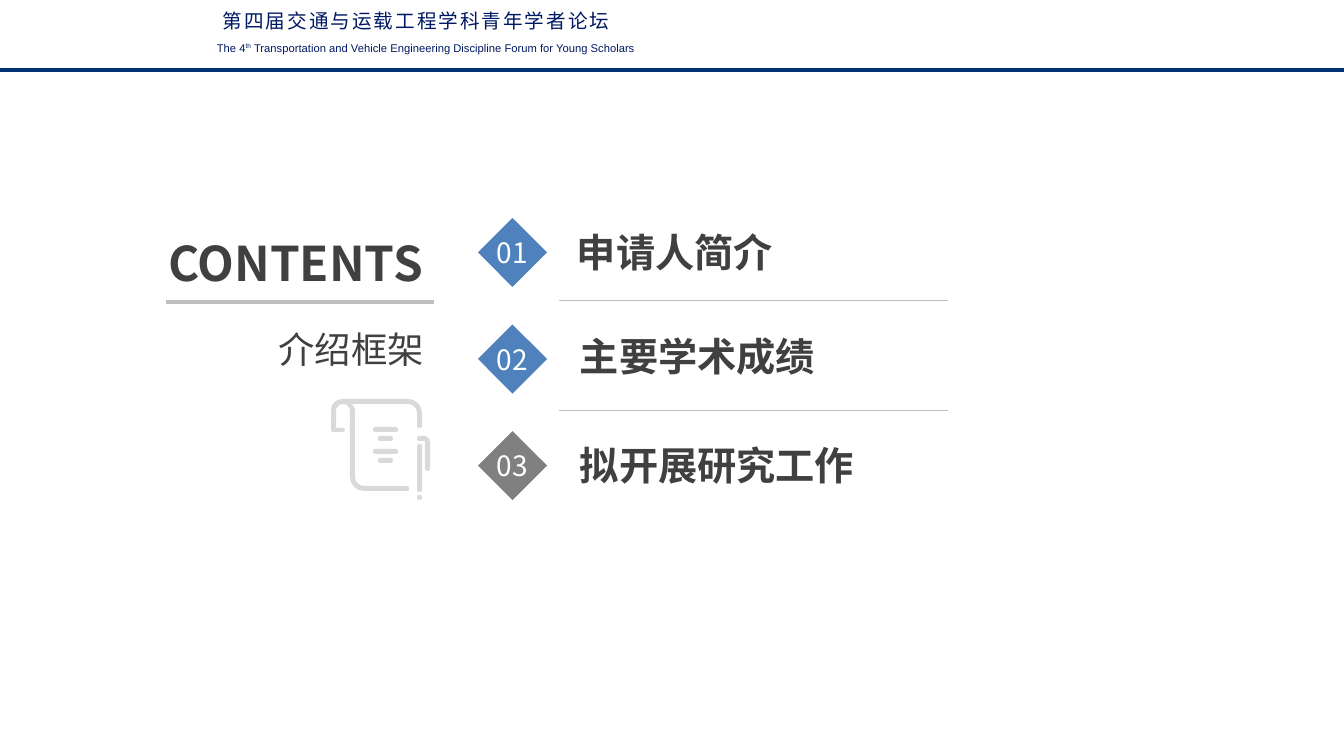
import math

from lxml import etree
from pptx import Presentation, util as u
from pptx.dml.color import RGBColor
from pptx.enum import shapes, text
from pptx.oxml.ns import qn

PX = 914400 / 100.8
LATIN, CJK = "Arial", "Noto Sans CJK SC"

NAVY = RGBColor(0x00, 0x19, 0x64)
HEADER_BLUE = RGBColor(0x00, 0x32, 0x75)
BLUE = RGBColor(0x4F, 0x81, 0xBD)
GRAY = RGBColor(0x80, 0x80, 0x80)
RULE_GRAY = RGBColor(0xBF, 0xBF, 0xBF)
ICON_GRAY = RGBColor(0xD9, 0xD9, 0xD9)
DARK = RGBColor(0x40, 0x40, 0x40)
WHITE = RGBColor(0xFF, 0xFF, 0xFF)

FORUM = "第四届交通与运载工程学科青年学者论坛"
FORUM_ENGLISH = ("The 4", "th", " Transportation and Vehicle Engineering "
                 "Discipline Forum for Young Scholars")
TITLE, SUBTITLE = "CONTENTS", "介绍框架"

# number, heading, diamond colour, heading left and top
CHAPTERS = [
    ("01", "申请人简介", BLUE, 567, 224),
    ("02", "主要学术成绩", BLUE, 570, 328),
    ("03", "拟开展研究工作", GRAY, 570, 437),
]
DIAMOND_LEFT, DIAMOND_SIZE = 478, 69
FIRST_DIAMOND_TOP, LAST_DIAMOND_TOP = 218, 431
CHAPTER_PITCH = (LAST_DIAMOND_TOP - FIRST_DIAMOND_TOP) / (len(CHAPTERS) - 1)

# from, to, colour, points
LINES = [
    ((0, 70), (1344, 70), HEADER_BLUE, 3),
    ((559, 300), (948, 300), RULE_GRAY, 0.25),
    ((559, 410), (948, 410), RULE_GRAY, 0.25),
    ((320, 330), (371, 330), WHITE, 0.75),
    ((166, 302), (434, 302), RULE_GRAY, 3),
]

# left, top, right, bottom of the round-ended strokes
SCROLL_BARS = [
    (373, 427, 398, 432), (378, 436, 393, 441),
    (373, 449, 398, 454), (378, 458, 393, 463),
    (417, 444, 422, 492), (417, 495, 422, 500),
]
# x, y, corner radius
SCROLL_BODY = [
    (417, 428, 2), (422, 428, 2), (422, 399, 14), (331, 399, 11),
    (331, 432, 2), (345, 432, 2), (345, 428, 2), (336, 428, 0),
    (336, 404, 7), (350, 404, 7), (350, 491, 14), (409, 491, 2),
    (409, 486, 2), (355, 486, 9), (355, 409, 0), (352, 404, 0), (417, 404, 9),
]
SCROLL_HOOK = [
    (417, 436, 2), (430, 436, 6), (430, 471, 2),
    (425, 471, 2), (425, 441, 1), (417, 441, 2),
]


def px(*lengths):
    return [round(length * PX) for length in lengths]


def style(paragraph, size, color, latin=CJK, bold=False, spacing=0):
    font = paragraph.font
    font.name, font.size, font.bold = latin, u.Pt(size), bold
    font.color.rgb = color
    properties = paragraph._p.pPr.find(qn("a:defRPr"))
    if spacing:
        properties.set("spc", str(spacing))
    east_asian = etree.Element(qn("a:ea"), typeface=CJK)
    properties.find(qn("a:latin")).addnext(east_asian)


def add_text(slide, box, words, middle=False):
    frame = slide.shapes.add_textbox(*px(*box)).text_frame
    frame.word_wrap = True
    if middle:
        frame.vertical_anchor = text.MSO_ANCHOR.MIDDLE
    paragraph = frame.paragraphs[0]
    for part in words:
        paragraph.add_run().text = part
    return paragraph


def add_line(slide, start, end, color, width):
    line = slide.shapes.add_connector(
        shapes.MSO_CONNECTOR.STRAIGHT, *px(*start, *end))
    line.line.color.rgb = color
    line.line.width = u.Pt(width)
    etree.SubElement(line._element.spPr, qn("a:effectLst"))


def fill_plain(shape, color):
    shape.shadow.inherit = False
    shape.fill.solid()
    shape.fill.fore_color.rgb = color
    shape.line.fill.background()


def rounded(corners):
    """Return the outline in EMU, each corner replaced by a circular arc."""
    points = []
    for i, (x, y, radius) in enumerate(corners):
        if not radius:
            points.append(px(x, y))
            continue
        directions = []
        for nx, ny, _ in (corners[i - 1], corners[(i + 1) % len(corners)]):
            distance = math.hypot(nx - x, ny - y)
            directions.append(((nx - x) / distance, (ny - y) / distance))
        (ax, ay), (bx, by) = directions
        steps = 2 if radius < 3 else 4
        for step in range(steps + 1):
            angle = step / steps * math.pi / 2
            a, b = 1 - math.sin(angle), 1 - math.cos(angle)
            points.append(px(x + radius * (a * ax + b * bx),
                             y + radius * (a * ay + b * by)))
    return points


def add_scroll(slide):
    bars = [[(l, t, 2), (r, t, 2), (r, b, 2), (l, b, 2)]
            for l, t, r, b in SCROLL_BARS]
    outlines = [rounded(part) for part in (SCROLL_BODY, SCROLL_HOOK, *bars)]
    builder = slide.shapes.build_freeform(*outlines[0][0])
    for i, outline in enumerate(outlines):
        if i:
            builder.move_to(*outline[0])
        builder.add_line_segments(outline[1:], close=True)
    fill_plain(builder.convert_to_shape(), ICON_GRAY)


def add_chapter(slide, index, number, heading, color, left, top):
    diamond = slide.shapes.add_shape(
        shapes.MSO_SHAPE.DIAMOND,
        *px(DIAMOND_LEFT, FIRST_DIAMOND_TOP + index * CHAPTER_PITCH,
            DIAMOND_SIZE, DIAMOND_SIZE))
    fill_plain(diamond, color)
    frame = diamond.text_frame
    frame.word_wrap = False
    frame.margin_left = frame.margin_right = 0
    frame.margin_top = frame.margin_bottom = 0
    frame.vertical_anchor = text.MSO_ANCHOR.MIDDLE
    frame.text = number
    frame.paragraphs[0].alignment = text.PP_ALIGN.CENTER
    style(frame.paragraphs[0], 20, WHITE)
    style(add_text(slide, (left, top, 420, 56), [heading], middle=True),
          28, DARK, bold=True)


def main():
    deck = Presentation()
    deck.slide_width, deck.slide_height = px(1344, 756)
    slide = deck.slides.add_slide(deck.slide_layouts[5])

    style(add_text(slide, (213, 4, 432, 33), [FORUM]),
          14, NAVY, LATIN, spacing=140)
    english = add_text(slide, (207, 36, 446, 23), FORUM_ENGLISH)
    style(english, 8, NAVY, LATIN)
    english.runs[1].font._element.set("baseline", "30000")

    title = slide.shapes.title
    title.left, title.top, title.width, title.height = px(142, 219, 291, 87)
    frame = title.text_frame
    frame.text = TITLE
    frame.auto_size = text.MSO_AUTO_SIZE.NONE
    frame.vertical_anchor = text.MSO_ANCHOR.MIDDLE
    frame.paragraphs[0].alignment = text.PP_ALIGN.RIGHT
    style(frame.paragraphs[0], 34.1, DARK, bold=True)

    subtitle = add_text(slide, (143, 318, 291, 55), [SUBTITLE])
    subtitle.alignment = text.PP_ALIGN.RIGHT
    subtitle.line_spacing = 1.1
    style(subtitle, 26, DARK)

    for line in LINES:
        add_line(slide, *line)
    for index, chapter in enumerate(CHAPTERS):
        add_chapter(slide, index, *chapter)
    add_scroll(slide)
    deck.save("out.pptx")


if __name__ == "__main__":
    main()
